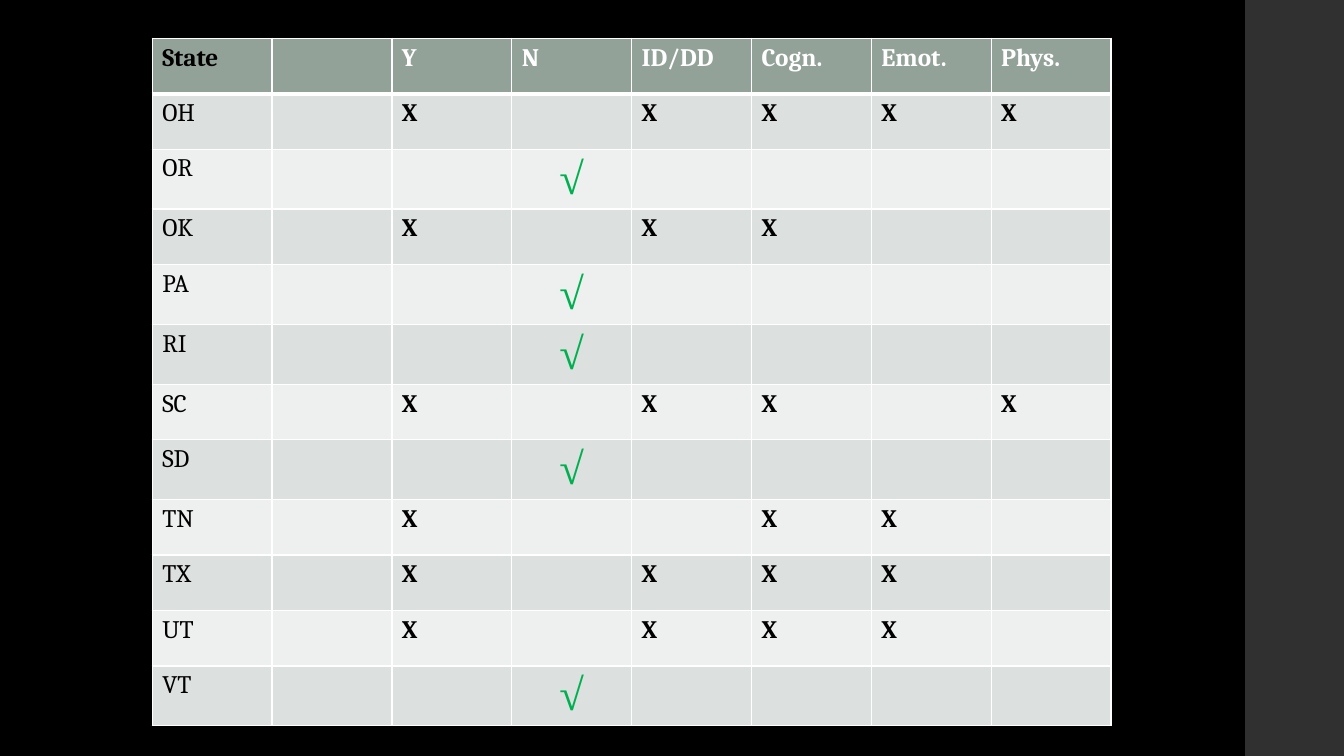
from lxml import etree
from pptx import Presentation
from pptx.dml.color import RGBColor
from pptx.enum.shapes import MSO_SHAPE
from pptx.enum.text import PP_ALIGN
from pptx.oxml.ns import qn
from pptx.util import Inches, Pt

RECTANGLE = MSO_SHAPE.RECTANGLE
CENTER = PP_ALIGN.CENTER
LEFT = PP_ALIGN.LEFT

BLACK = RGBColor(0x00, 0x00, 0x00)
WHITE = RGBColor(0xFF, 0xFF, 0xFF)
CHARCOAL = RGBColor(0x30, 0x30, 0x30)
SAGE = RGBColor(0x93, 0xA2, 0x99)
BAND_DARK = RGBColor(0xDC, 0xE0, 0xDE)
BAND_LIGHT = RGBColor(0xEE, 0xF0, 0xEF)
GREEN = RGBColor(0x00, 0xB0, 0x50)

HEADERS = ["State", "", "Y", "N", "ID/DD", "Cogn.", "Emot.", "Phys."]
STATES = {
    "OH": ["Y", "ID/DD", "Cogn.", "Emot.", "Phys."],
    "OR": ["N"],
    "OK": ["Y", "ID/DD", "Cogn."],
    "PA": ["N"],
    "RI": ["N"],
    "SC": ["Y", "ID/DD", "Cogn.", "Phys."],
    "SD": ["N"],
    "TN": ["Y", "Cogn.", "Emot."],
    "TX": ["Y", "ID/DD", "Cogn.", "Emot."],
    "UT": ["Y", "ID/DD", "Cogn.", "Emot."],
    "VT": ["N"],
}

TEXT = {"name": "Cambria", "size": Pt(18), "bold": False}
STRONG = {**TEXT, "bold": True}
CHECK = {"name": "Times New Roman", "size": Pt(32), "bold": True}


def add_border(cell, side, width):
    line = etree.SubElement(cell._tc.get_or_add_tcPr(), qn(f"a:{side}"), w=str(Pt(width)))
    fill = etree.SubElement(line, qn("a:solidFill"))
    etree.SubElement(fill, qn("a:srgbClr"), val=str(WHITE))


def write_cell(cell, text, font_format, color, alignment=LEFT):
    paragraph = cell.text_frame.paragraphs[0]
    paragraph.alignment = alignment
    run = paragraph.add_run()
    run.text = text
    for attribute, value in font_format.items():
        setattr(run.font, attribute, value)
    run.font.color.rgb = color


presentation = Presentation()
presentation.slide_width = Inches(13.33)
presentation.slide_height = Inches(7.5)
slide = presentation.slides.add_slide(presentation.slide_layouts[6])
slide.background.fill.solid()
slide.background.fill.fore_color.rgb = BLACK

side_band = slide.shapes.add_shape(RECTANGLE, Inches(12.35), 0, Inches(0.98), Inches(7.5))
side_band.shadow.inherit = False
side_band.fill.solid()
side_band.fill.fore_color.rgb = CHARCOAL
side_band.line.fill.background()

row_count = len(STATES) + 1
table = slide.shapes.add_table(
    row_count, len(HEADERS), Inches(1.51), Inches(0.38),
    Inches(9.51), Inches(0.55 * row_count),
).table

for row in range(row_count):
    for column in range(len(HEADERS)):
        cell = table.cell(row, column)
        add_border(cell, "lnL", 1)
        add_border(cell, "lnR", 1)
        add_border(cell, "lnT", 3 if row == 1 else 1)
        add_border(cell, "lnB", 3 if row == 0 else 1)
        cell.fill.solid()
        band = BAND_DARK if row % 2 else BAND_LIGHT
        cell.fill.fore_color.rgb = SAGE if row == 0 else band

for column, header in enumerate(HEADERS):
    if header:
        write_cell(table.cell(0, column), header, STRONG, WHITE if column else BLACK)

for row, (state, marks) in enumerate(STATES.items(), start=1):
    write_cell(table.cell(row, 0), state, TEXT, BLACK)
    for mark in marks:
        cell = table.cell(row, HEADERS.index(mark))
        if mark == "N":
            write_cell(cell, "√", CHECK, GREEN, CENTER)
        else:
            write_cell(cell, "X", STRONG, BLACK)

presentation.save("out.pptx")
